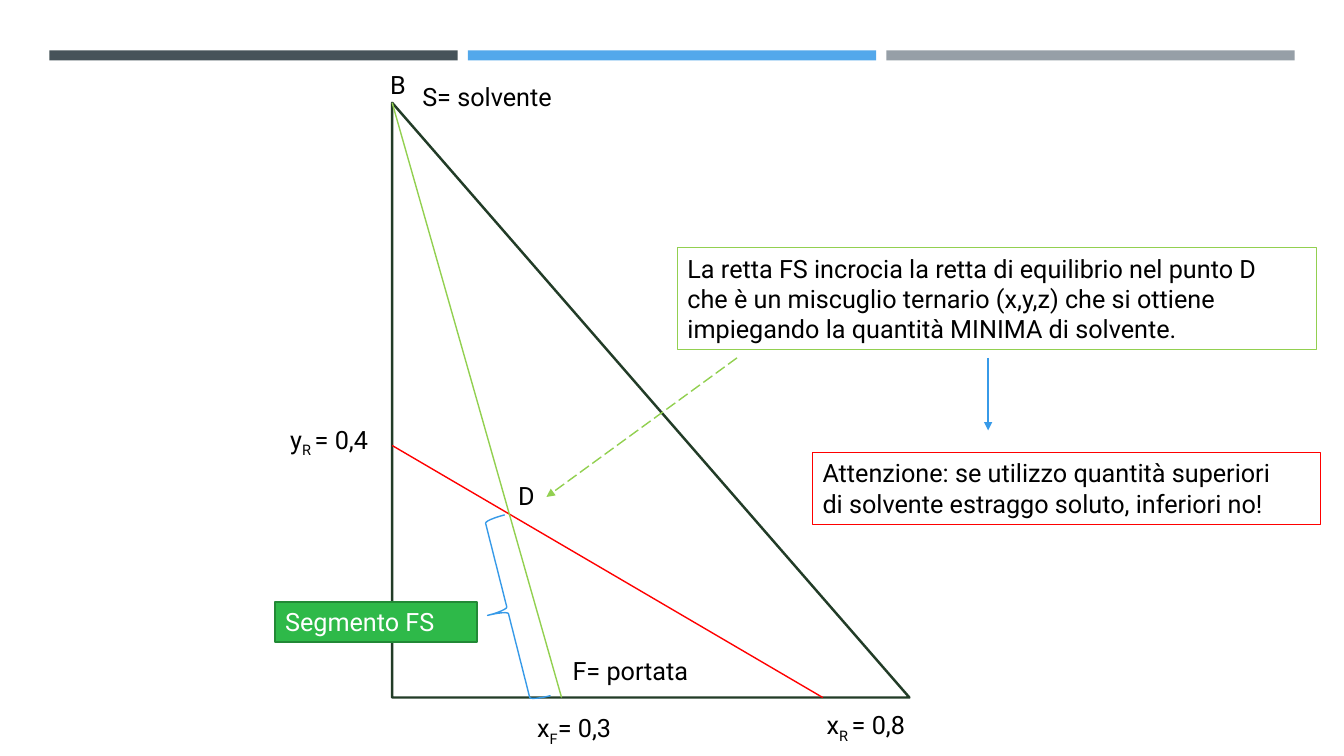
from lxml.etree import SubElement
from pptx import Presentation
from pptx.dml.color import RGBColor
from pptx.enum.dml import MSO_LINE
from pptx.enum.shapes import MSO_CONNECTOR, MSO_SHAPE
from pptx.enum.text import MSO_ANCHOR, PP_ALIGN
from pptx.oxml.ns import qn
from pptx.util import Pt

PX = 9144
FONT = "Roboto"
COLORS = {
    "slate": "465359", "sky": "53A8EB", "grey": "969FA7", "forest": "223C27",
    "red": "FF0000", "lime": "92D050", "blue": "379AE8", "green": "2EB949",
    "dark_green": "228936", "black": "000000", "white": "FFFFFF",
}


def rgb(name):
    """Return the named colour."""
    return RGBColor.from_string(COLORS[name])


def add_outline(slide, kind, box, line=None, weight=1, fill=None):
    """Add a preset shape with plain line and fill."""
    shape = slide.shapes.add_shape(kind, *(value * PX for value in box))
    shape.shadow.inherit = False
    if fill:
        shape.fill.solid()
        shape.fill.fore_color.rgb = rgb(fill)
    else:
        shape.fill.background()
    if line:
        shape.line.color.rgb = rgb(line)
        shape.line.width = Pt(weight)
    else:
        shape.line.fill.background()
    return shape


def add_segment(slide, start, end, color, arrow=False, dash=None):
    """Draw a straight line, optionally dashed or ending in an arrowhead."""
    segment = slide.shapes.add_connector(
        MSO_CONNECTOR.STRAIGHT, *(value * PX for value in (*start, *end)))
    segment.line.color.rgb = rgb(color)
    segment.line.width = Pt(1)
    if dash:
        segment.line.dash_style = dash
    properties = segment.element.spPr
    if arrow:
        SubElement(properties.find(qn("a:ln")), qn("a:tailEnd"), type="triangle")
    SubElement(properties, qn("a:effectLst"))


def write(shape, lines, color="black", wrap=True):
    """Write each line as a left-aligned paragraph."""
    frame = shape.text_frame
    frame.word_wrap = wrap
    frame.vertical_anchor = MSO_ANCHOR.TOP
    frame.text = "\n".join(lines)
    for paragraph in frame.paragraphs:
        paragraph.alignment = PP_ALIGN.LEFT
        paragraph.font.name = FONT
        paragraph.font.size = Pt(18)
        paragraph.font.color.rgb = rgb(color)


def add_label(slide, box, text, subscript="", value=""):
    """Add a diagram label with an optional subscript and value."""
    label = slide.shapes.add_textbox(*(length * PX for length in box))
    write(label, [text], wrap=False)
    if subscript:
        paragraph = label.text_frame.paragraphs[0]
        lowered = paragraph.add_run()
        lowered.text = subscript
        lowered.font._element.set("baseline", "-25000")
        paragraph.add_run().text = value


def add_header_bars(slide, left, top, width, height):
    """Divide the header strip into three coloured bars."""
    gap = 10
    bar_width = (width - 2 * gap) // 3
    for index, color in enumerate(("slate", "sky", "grey")):
        bar_left = left + index * (bar_width + gap)
        add_outline(slide, MSO_SHAPE.RECTANGLE, (bar_left, top, bar_width, height), fill=color)


def add_ternary_diagram(slide, left, top, width, height):
    """Draw the triangle, its two lines, labels and marked segment."""
    bottom = top + height
    add_outline(slide, MSO_SHAPE.RIGHT_TRIANGLE, (left, top, width, height), "forest", 1.75)
    add_segment(slide, (left, top + 340), (left + 427, bottom), "red")
    add_segment(slide, (left, top), (left + 168, bottom), "lime")
    labels = (
        (421, 597, 105, "x", "R ", "= 0,8"),
        (-111, 314, 107, "y", "R ", "= 0,4"),
        (134, 600, 100, "x", "F", "= 0,3"),
        (-12, -38, 37, "B"),
        (115, 370, 38, "D"),
        (169, 543, 142, "F= portata"),
        (20, -26, 160, "S= solvente"),
    )
    for x, y, label_width, *parts in labels:
        add_label(slide, (left + x, top + y, label_width, 40), *parts)
    brace = add_outline(slide, MSO_SHAPE.LEFT_BRACE, (left + 94, top + 411, 41, 185), "blue")
    brace.rotation = 345.8
    segment_tag = add_outline(slide, MSO_SHAPE.RECTANGLE, (left - 116, top + 495, 200, 40),
                              "dark_green", 1.75, "green")
    write(segment_tag, ["Segmento FS"], "white")


def add_notes_column(slide, left, top, width, height):
    """Place the two explanations and the arrows leaving the first."""
    explanation = add_outline(slide, MSO_SHAPE.RECTANGLE, (left, top, width - 4, 101),
                              "lime", 0.75)
    write(explanation, [
        "La retta FS incrocia la retta di equilibrio nel punto D",
        "che è un miscuglio ternario (x,y,z) che si ottiene",
        "impiegando la quantità MINIMA di solvente.",
    ])
    arrow_top = top + 109
    add_segment(slide, (left + 59, arrow_top), (left - 130, top + 247), "lime",
                arrow=True, dash=MSO_LINE.LONG_DASH)
    add_segment(slide, (left + 308, arrow_top), (left + 308, top + 181), "blue", arrow=True)
    warning = add_outline(slide, MSO_SHAPE.RECTANGLE,
                          (left + 134, top + height - 71, width - 134, 71), "red", 0.75)
    write(warning, [
        "Attenzione: se utilizzo quantità superiori",
        "di solvente estraggo soluto, inferiori no!",
    ])


def main():
    """Build and save the extraction slide."""
    presentation = Presentation()
    presentation.slide_width = 1333 * PX
    presentation.slide_height = 750 * PX
    slide = presentation.slides.add_slide(presentation.slide_layouts[6])
    add_header_bars(slide, 49, 50, 1235, 10)
    add_ternary_diagram(slide, 389, 102, 513, 590)
    add_notes_column(slide, 672, 246, 638, 274)
    presentation.save("out.pptx")


if __name__ == "__main__":
    main()
